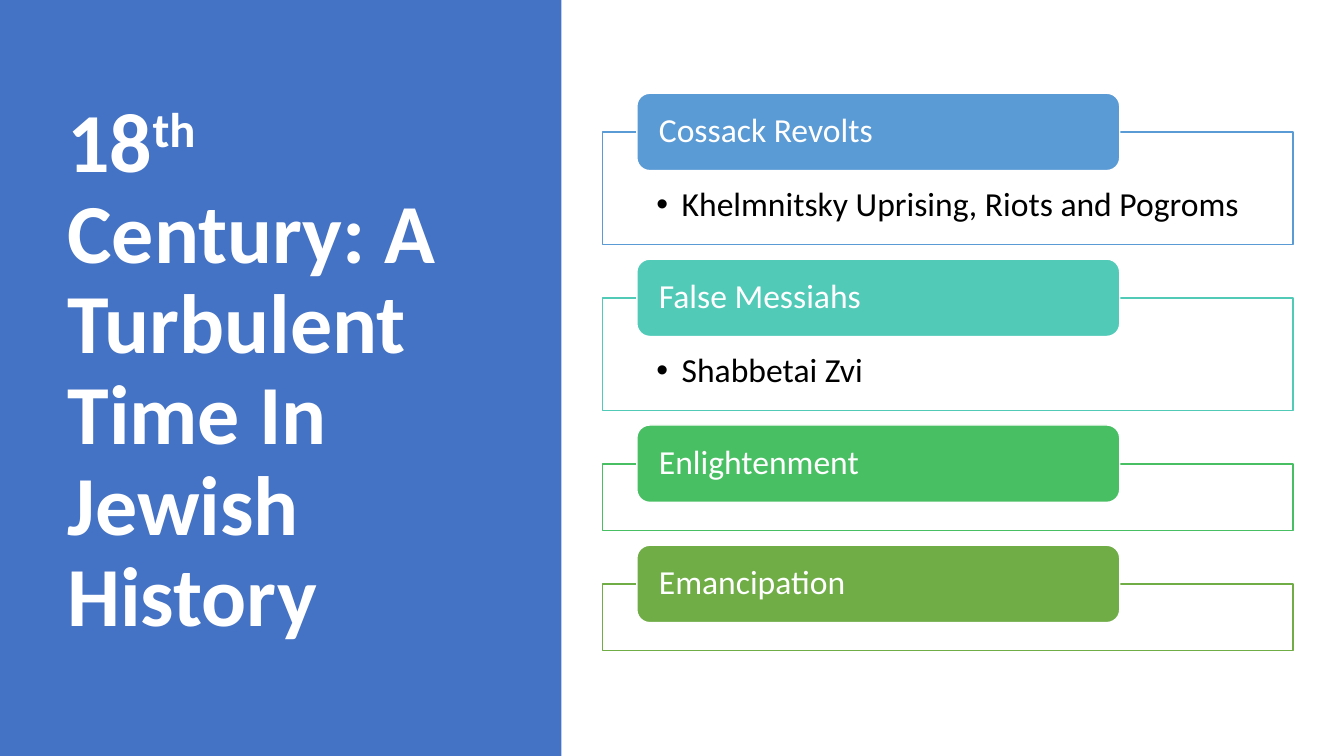
from dataclasses import dataclass

from lxml.etree import SubElement
from pptx import Presentation
from pptx.dml.color import RGBColor
from pptx.enum.shapes import MSO_SHAPE
from pptx.enum.text import MSO_ANCHOR, MSO_AUTO_SIZE, PP_ALIGN
from pptx.oxml.ns import qn
from pptx.util import Cm, Pt

SLIDE_WIDTH, SLIDE_HEIGHT = 33.87, 19.05
PANEL_WIDTH = 14.15
FIRST_TOP = 2.35
FRAME_LEFT, FRAME_WIDTH = 15.19, 17.4
HEADING_LEFT, HEADING_WIDTH, HEADING_HEIGHT = 16.05, 12.17, 1.95
FRAME_OFFSET = 0.98
TOPIC_GAP = 0.37
WHITE = "FFFFFF"


@dataclass
class Topic:
    heading: str
    colour: str
    frame_height: float = 1.68
    detail: str = ""


TOPICS = [
    Topic("Cossack Revolts", "5B9BD5", 2.83, "Khelmnitsky Uprising, Riots and Pogroms"),
    Topic("False Messiahs", "52CAB8", 2.83, "Shabbetai Zvi"),
    Topic("Enlightenment", "49BF64"),
    Topic("Emancipation", "70AD47"),
]


def rgb(colour: str) -> RGBColor:
    return RGBColor.from_string(colour)


def add_box(slide, kind, left: float, top: float, width: float, height: float,
            fill: str, line: str = ""):
    shape = slide.shapes.add_shape(kind, Cm(left), Cm(top), Cm(width), Cm(height))
    shape.shadow.inherit = False
    shape.fill.solid()
    shape.fill.fore_color.rgb = rgb(fill)
    if line:
        shape.line.color.rgb = rgb(line)
        shape.line.width = Pt(1)
    else:
        shape.line.fill.background()
    return shape


def add_run(paragraph, text: str, *, size: float, colour: str, bold: bool = False):
    paragraph.alignment = PP_ALIGN.LEFT
    paragraph.line_spacing = 0.9
    run = paragraph.add_run()
    run.text = text
    run.font.name = "Calibri"
    run.font.size = Pt(size)
    run.font.bold = bold
    run.font.color.rgb = rgb(colour)
    return run


def set_frame(shape, anchor, side: float, top: float, bottom: float):
    frame = shape.text_frame
    frame.word_wrap = True
    frame.auto_size = MSO_AUTO_SIZE.NONE
    frame.vertical_anchor = anchor
    frame.margin_left = frame.margin_right = Cm(side)
    frame.margin_top, frame.margin_bottom = Cm(top), Cm(bottom)
    return frame.paragraphs[0]


def add_bullet(paragraph) -> None:
    properties = paragraph._p.get_or_add_pPr()
    properties.set("marL", str(Cm(0.64)))
    properties.set("indent", str(-Cm(0.64)))
    SubElement(properties, qn("a:buFont")).set("typeface", "Arial")
    SubElement(properties, qn("a:buChar")).set("char", "•")


def add_title(slide) -> None:
    title = slide.shapes.title
    title.left, title.top, title.width, title.height = Cm(1.45), Cm(1.73), Cm(10.57), Cm(15.29)
    paragraph = set_frame(title, MSO_ANCHOR.MIDDLE, 0.25, 0.13, 0.13)
    style = {"size": 60, "colour": WHITE, "bold": True}
    add_run(paragraph, "18", **style)
    ordinal = add_run(paragraph, "th", **style)
    ordinal.font._element.set("baseline", "30000")
    add_run(paragraph, " Century: A Turbulent Time In Jewish History", **style)


def add_topic(slide, topic: Topic, top: float) -> float:
    """Draw one topic and return the top of the next one."""
    frame_top = top + FRAME_OFFSET
    frame = add_box(slide, MSO_SHAPE.RECTANGLE, FRAME_LEFT, frame_top,
                    FRAME_WIDTH, topic.frame_height, WHITE, topic.colour)
    if topic.detail:
        paragraph = set_frame(frame, MSO_ANCHOR.TOP, 1.35, 1.4, 0.48)
        add_run(paragraph, topic.detail, size=24, colour="000000")
        add_bullet(paragraph)

    heading = add_box(slide, MSO_SHAPE.ROUNDED_RECTANGLE, HEADING_LEFT, top,
                      HEADING_WIDTH, HEADING_HEIGHT, topic.colour, WHITE)
    paragraph = set_frame(heading, MSO_ANCHOR.MIDDLE, 0.46, 0, 0)
    add_run(paragraph, topic.heading, size=24, colour=WHITE)
    return frame_top + topic.frame_height + TOPIC_GAP


def main() -> None:
    presentation = Presentation()
    presentation.slide_width, presentation.slide_height = Cm(SLIDE_WIDTH), Cm(SLIDE_HEIGHT)
    slide = presentation.slides.add_slide(presentation.slide_layouts[5])

    # Blue panel, placed behind the title
    panel = add_box(slide, MSO_SHAPE.RECTANGLE, 0, 0, PANEL_WIDTH, SLIDE_HEIGHT, "4472C4")
    slide.shapes.title.element.addprevious(panel.element)
    add_title(slide)

    # Stack of topics
    top = FIRST_TOP
    for topic in TOPICS:
        top = add_topic(slide, topic, top)

    presentation.save("out.pptx")


if __name__ == "__main__":
    main()
